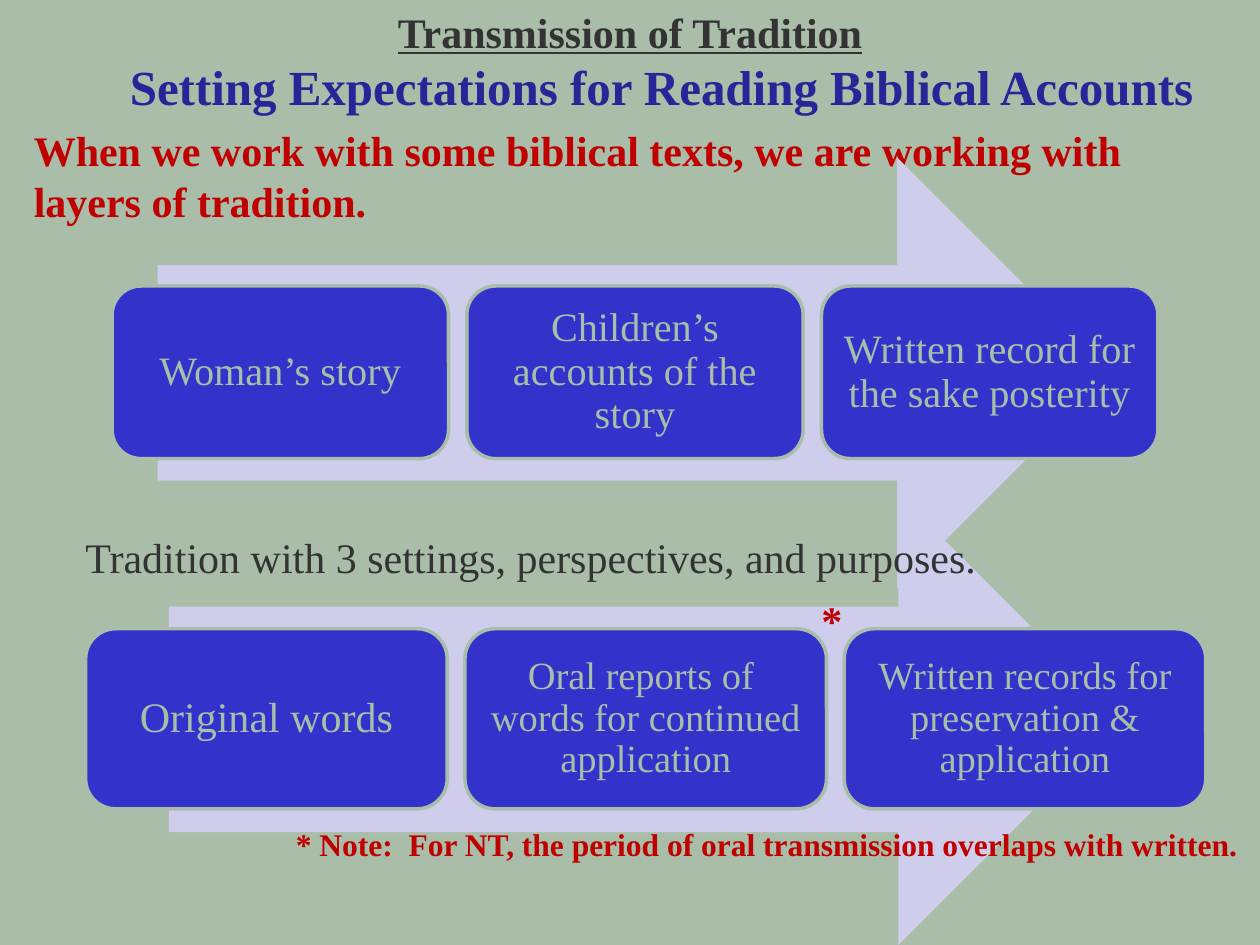
from dataclasses import dataclass

import pptx
import pptx.dml.color
import pptx.enum.shapes
import pptx.enum.text
import pptx.util

Inches, Pt = pptx.util.Inches, pptx.util.Pt
RGBColor = pptx.dml.color.RGBColor
MSO_SHAPE = pptx.enum.shapes.MSO_SHAPE
MSO_ANCHOR = pptx.enum.text.MSO_ANCHOR
MSO_AUTO_SIZE = pptx.enum.text.MSO_AUTO_SIZE
PP_ALIGN = pptx.enum.text.PP_ALIGN

SAGE = RGBColor(0xA9, 0xBD, 0xA9)
CHARCOAL = RGBColor(0x33, 0x33, 0x33)
NAVY = RGBColor(0x26, 0x26, 0x99)
RED = RGBColor(0xC0, 0x00, 0x00)
LAVENDER = RGBColor(0xCE, 0xCE, 0xEC)
BLUE = RGBColor(0x33, 0x33, 0xCC)
FONT = "Times New Roman"


@dataclass
class Note:
    text: str
    box: tuple[float, float, float, float]
    size: float
    color: RGBColor
    bold: bool


@dataclass
class Process:
    arrow: tuple[float, float, float, float]
    first_step: tuple[float, float, float, float]
    pitch: float
    steps: list[tuple[str, float]]


PROCESSES = [
    Process((1.34, 3.92, 7.58, 3.58), (0.68, 4.99, 2.87, 1.43), 3.01, [
        ("Original words", 24),
        ("Oral reports of  words for continued application", 22),
        ("Written records for preservation & application", 22),
    ]),
    Process((1.25, 1.25, 7.58, 3.42), (0.89, 2.27, 2.67, 1.37), 2.815, [
        ("Woman’s story", 23),
        ("Children’s accounts of the story", 23),
        ("Written record for the sake posterity", 23),
    ]),
]

INTRO = Note("When we work with some biblical texts, we are working with "
             "layers of tradition.", (0.17, 0.94, 9.5, 0.91), 24, RED, True)
REMARKS = [
    Note("Tradition with 3 settings, perspectives, and purposes.",
         (0.58, 4.17, 7.75, 0.51), 24, CHARCOAL, False),
    Note("* Note:  For NT, the period of oral transmission overlaps with written.",
         (2.25, 6.5, 7.75, 0.4), 18, RED, True),
    Note("*", (6.42, 4.67, 0.33, 0.51), 24, RED, True),
]


def set_all(obj, values: dict) -> None:
    for name, value in values.items():
        setattr(obj, name, value)


def write(p, text: str, size: float, color: RGBColor, **extra) -> None:
    r = p.add_run()
    r.text = text
    set_all(r.font, {"name": FONT, "size": Pt(size), **extra})
    r.font.color.rgb = color


def add_title(s) -> None:
    sp = s.shapes.title
    set_all(sp, {"left": 0, "top": 0, "width": Inches(10), "height": Inches(0.98)})
    tf = sp.text_frame
    set_all(tf, {"vertical_anchor": MSO_ANCHOR.TOP, "word_wrap": True,
                 "auto_size": MSO_AUTO_SIZE.NONE})
    p = tf.paragraphs[0]
    write(p, "Transmission of Tradition", 24, CHARCOAL, bold=True, underline=True)
    subtitle = tf.add_paragraph()
    subtitle.level = 1
    subtitle._p.get_or_add_pPr().set("marL", str(Inches(0.5)))
    subtitle._p.get_or_add_pPr().set("indent", "0")
    write(subtitle, "Setting Expectations for Reading Biblical Accounts", 28, NAVY,
          bold=True, underline=False)
    for p in tf.paragraphs:
        set_all(p, {"alignment": PP_ALIGN.CENTER, "space_before": Pt(0)})


def add_note(s, note: Note) -> None:
    tf = s.shapes.add_textbox(*map(Inches, note.box)).text_frame
    set_all(tf, {"word_wrap": True, "auto_size": MSO_AUTO_SIZE.SHAPE_TO_FIT_TEXT})
    write(tf.paragraphs[0], note.text, note.size, note.color, bold=note.bold)


def add_filled(s, kind, box: tuple, color: RGBColor):
    sp = s.shapes.add_shape(kind, *map(Inches, box))
    sp.shadow.inherit = False
    sp.fill.solid()
    sp.fill.fore_color.rgb = color
    return sp


def add_process(s, process: Process) -> None:
    arrow = add_filled(s, MSO_SHAPE.RIGHT_ARROW, process.arrow, LAVENDER)
    arrow.line.fill.background()
    left, top, width, height = process.first_step
    for i, (text, size) in enumerate(process.steps):
        box = (left + i * process.pitch, top, width, height)
        sp = add_filled(s, MSO_SHAPE.ROUNDED_RECTANGLE, box, BLUE)
        sp.line.color.rgb = SAGE
        sp.line.width = Pt(2)
        tf = sp.text_frame
        inset = Inches(0.1)
        set_all(tf, {"word_wrap": True, "vertical_anchor": MSO_ANCHOR.MIDDLE,
                     "margin_left": inset, "margin_right": inset,
                     "margin_top": inset, "margin_bottom": inset})
        p = tf.paragraphs[0]
        set_all(p, {"alignment": PP_ALIGN.CENTER, "line_spacing": 0.9})
        write(p, text, size, SAGE)


def main() -> None:
    prs = pptx.Presentation()
    set_all(prs, {"slide_width": Inches(10), "slide_height": Inches(7.5)})
    s = prs.slides.add_slide(prs.slide_layouts[5])
    s.background.fill.solid()
    s.background.fill.fore_color.rgb = SAGE

    # Heading and introduction
    add_title(s)
    add_note(s, INTRO)

    # Two transmission processes
    for process in PROCESSES:
        add_process(s, process)

    # Remarks over the arrows
    for note in REMARKS:
        add_note(s, note)

    prs.save("out.pptx")


if __name__ == "__main__":
    main()
